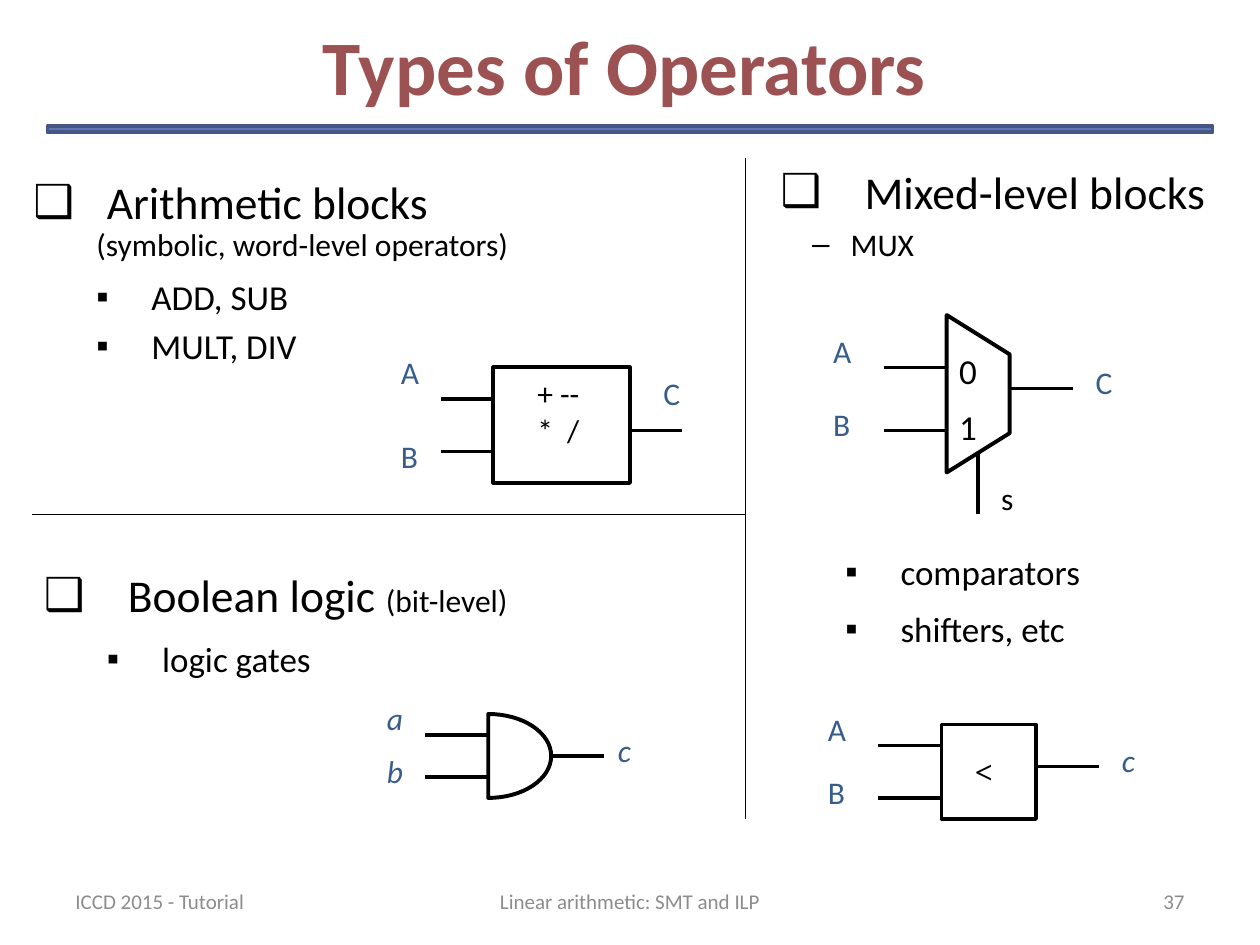
from math import cos, pi, sin

from lxml.etree import SubElement
from pptx import Presentation
from pptx.dml.color import RGBColor
from pptx.enum.shapes import MSO_CONNECTOR, MSO_SHAPE
from pptx.enum.text import MSO_ANCHOR, PP_ALIGN
from pptx.oxml.ns import qn
from pptx.util import Pt

BLACK, BLUE, RED, GREY = "000000", "385D8A", "9C5252", "8C8C8C"
RULE_FILL, RULE_LINE = "6076B4", "475785"


def rgb(value):
    return RGBColor.from_string(value)


def add_run(p, text, size, color=BLACK, font="Calibri", bold=False, italic=False):
    r = p.add_run()
    r.text = text
    r.font.name = font
    r.font.size = Pt(size)
    r.font.color.rgb = rgb(color)
    r.font.bold = bold
    r.font.italic = italic


def add_textbox(shapes, x, y, w, h, anchor=MSO_ANCHOR.TOP):
    tf = shapes.add_textbox(Pt(x), Pt(y), Pt(w), Pt(h)).text_frame
    tf.word_wrap = True
    tf.vertical_anchor = anchor
    return tf


def add_label(shapes, x, y, text, size=18, color=BLUE, **style):
    tf = add_textbox(shapes, x, y, 28, size * 1.6)
    add_run(tf.paragraphs[0], text, size, color, **style)


def add_line(shapes, x1, y1, x2, y2, width=2.25):
    cxn = shapes.add_connector(MSO_CONNECTOR.STRAIGHT, Pt(x1), Pt(y1), Pt(x2), Pt(y2))
    cxn.line.color.rgb = rgb(BLACK)
    cxn.line.width = Pt(width)
    SubElement(cxn._element.spPr, qn("a:effectLst"))


def outline(sp):
    sp.shadow.inherit = False
    sp.fill.background()
    sp.line.color.rgb = rgb(BLACK)
    sp.line.width = Pt(2.25)


def add_block(shapes, x, y, w, h):
    outline(shapes.add_shape(MSO_SHAPE.RECTANGLE, Pt(x), Pt(y), Pt(w), Pt(h)))


def add_polygon(shapes, points):
    start, *rest = [(Pt(px), Pt(py)) for px, py in points]
    builder = shapes.build_freeform(*start)
    builder.add_line_segments(rest, close=True)
    outline(builder.convert_to_shape())


def add_pins(shapes, x, y, w, inputs, output, in_len=36, out_len=36, italic=False):
    for text, wire_y, dx, dy in inputs:
        add_line(shapes, x - in_len, y + wire_y, x, y + wire_y)
        add_label(shapes, x + dx, y + dy, text, italic=italic)
    text, wire_y, dx, dy = output
    add_line(shapes, x + w, y + wire_y, x + w + out_len, y + wire_y)
    add_label(shapes, x + dx, y + dy, text, italic=text.islower())


def add_item(tf, runs, margin, indent=0, bullet=None, before=0, spacing=None):
    p = tf.paragraphs[0] if not tf.paragraphs[0].runs else tf.add_paragraph()
    p.space_before = Pt(before)
    if spacing:
        p.line_spacing = spacing
    pPr = p._p.get_or_add_pPr()
    pPr.set("marL", str(Pt(margin)))
    pPr.set("indent", str(Pt(indent)))
    if bullet:
        SubElement(pPr, qn("a:buFont")).set("typeface", "Arial")
        SubElement(pPr, qn("a:buChar")).set("char", bullet)
    for text, size in runs:
        add_run(p, text, size)


def add_heading(tf, runs, gap, before=5.2):
    add_item(tf, runs, 36 + gap, -36 - gap, "❑", before)


def add_bullet(tf, text, spacing=1.2):
    add_item(tf, [(text, 20)], 67.5, -31.5, "▪", 4, spacing)


def draw_alu(shapes, x, y, w, h):
    add_block(shapes, x, y, w, h)
    tf = add_textbox(shapes, x + 18, y, 66, 51)
    add_run(tf.paragraphs[0], "+ --", 18)
    add_run(tf.add_paragraph(), "*  /", 18)
    add_pins(shapes, x, y, w, [("A", 18, -60, -12), ("B", 48, -60, 36)],
             ("C", 36, 90, 0), in_len=30, out_len=30)


def draw_and_gate(shapes, x, y, w, h):
    steps = 32
    angles = [pi * i / steps - pi / 2 for i in range(steps + 1)]
    add_polygon(shapes, [(x + w * cos(a), y + h / 2 * (1 + sin(a))) for a in angles])
    add_pins(shapes, x, y, w, [("a", 12, -65, -12), ("b", 36, -65, 18)],
             ("c", 24, 67, 6), out_len=30, italic=True)


def draw_mux(shapes, x, y, w, h):
    add_polygon(shapes, [(x, y), (x + w, y + h / 4), (x + w, y + h * 3 / 4), (x, y + h)])
    add_pins(shapes, x, y, w, [("A", 30, -72, 6), ("B", 66, -72, 48)], ("C", 42, 78, 24))
    add_line(shapes, x + w / 2, y + h + 24, x + w / 2, y + h * 7 / 8)
    add_label(shapes, x + 24, y + h, "s", color=BLACK)
    add_label(shapes, x, y + 16, "0", 20, BLACK)
    add_label(shapes, x, y + 48, "1", 20, BLACK)


def draw_comparator(shapes, x, y, w, h):
    add_block(shapes, x, y, w, h)
    add_label(shapes, x + 12, y + 12, "<", color=BLACK, font="Times New Roman", bold=True)
    add_pins(shapes, x, y, w, [("A", 12, -72, -12), ("B", 42, -72, 24)], ("c", 24, 96, 6))


def add_symbol(s, draw, x, y, w, h):
    draw(s.shapes.add_group_shape().shapes, x, y, w, h)


def add_title(s, x, y, w, h):
    sp = s.shapes.title
    sp.left, sp.top, sp.width, sp.height = Pt(x), Pt(y), Pt(w), Pt(h)
    tf = sp.text_frame
    tf.vertical_anchor = MSO_ANCHOR.MIDDLE
    p = tf.paragraphs[0]
    p.alignment = PP_ALIGN.CENTER
    add_run(p, "Types of Operators", 44, RED, bold=True)
    rule = s.shapes.add_shape(MSO_SHAPE.RECTANGLE, Pt(x + 21), Pt(y + 72), Pt(666), Pt(3.6))
    rule.shadow.inherit = False
    rule.fill.solid()
    rule.fill.fore_color.rgb = rgb(RULE_FILL)
    rule.line.color.rgb = rgb(RULE_LINE)
    rule.line.width = Pt(2)


def add_arithmetic(s, x, y, w, h):
    tf = add_textbox(s.shapes, x - 6, y + 6, w - 12, 122)
    add_heading(tf, [("Arithmetic blocks", 26)], 6, before=13)
    add_item(tf, [("(symbolic, word-level operators)", 18)], 36, before=9, spacing=0.4)
    add_bullet(tf, "ADD, SUB")
    add_bullet(tf, "MULT, DIV", spacing=1)
    add_symbol(s, draw_alu, x + 264, y + 120, 78, 66)
    add_line(s.shapes, x, y + h, x + w, y + h, 0.75)


def add_boolean(s, x, y, w, h):
    tf = add_textbox(s.shapes, x, y + 26.5, w - 36, 73)
    add_heading(tf, [("Boolean logic ", 26), ("(bit-level)", 18)], 12)
    add_bullet(tf, "logic gates")
    add_symbol(s, draw_and_gate, x + 261, y + 114, 36, 48)


def add_mixed(s, x, y, w, h):
    add_line(s.shapes, x, y, x, y + h, 0.75)
    tf = add_textbox(s.shapes, x + 13, y, w - 20, 65)
    add_heading(tf, [("Mixed-level blocks", 26)], 12)
    add_item(tf, [("MUX", 18)], 40, -22, "–", 3.6)
    add_symbol(s, draw_mux, x + 115, y + 90, 36, 90)
    tf = add_textbox(s.shapes, x + 14, y + 216, w - 62, 68)
    add_bullet(tf, "comparators")
    add_bullet(tf, "shifters, etc")
    add_symbol(s, draw_comparator, x + 112, y + 324, 54, 54)


def add_footer(s, x, y, w, h):
    parts = [("ICCD 2015 - Tutorial", 0, 168, PP_ALIGN.LEFT),
             ("Linear arithmetic: SMT and ILP", 210, 228, PP_ALIGN.CENTER),
             ("37", w - 168, 168, PP_ALIGN.RIGHT)]
    for text, dx, width, align in parts:
        p = add_textbox(s.shapes, x + dx, y, width, h, MSO_ANCHOR.MIDDLE).paragraphs[0]
        p.alignment = align
        add_run(p, text, 12, GREY)


def main():
    prs = Presentation()
    prs.slide_width, prs.slide_height = Pt(720), Pt(540)
    s = prs.slides.add_slide(prs.slide_layouts[5])
    add_title(s, 6, 0, 702, 74)
    add_arithmetic(s, 18, 90, 408, 204)
    add_boolean(s, 18, 294, 408, 174)
    add_mixed(s, 426, 90, 288, 378)
    add_footer(s, 36, 500.5, 648, 29)
    prs.save("out.pptx")


if __name__ == "__main__":
    main()
